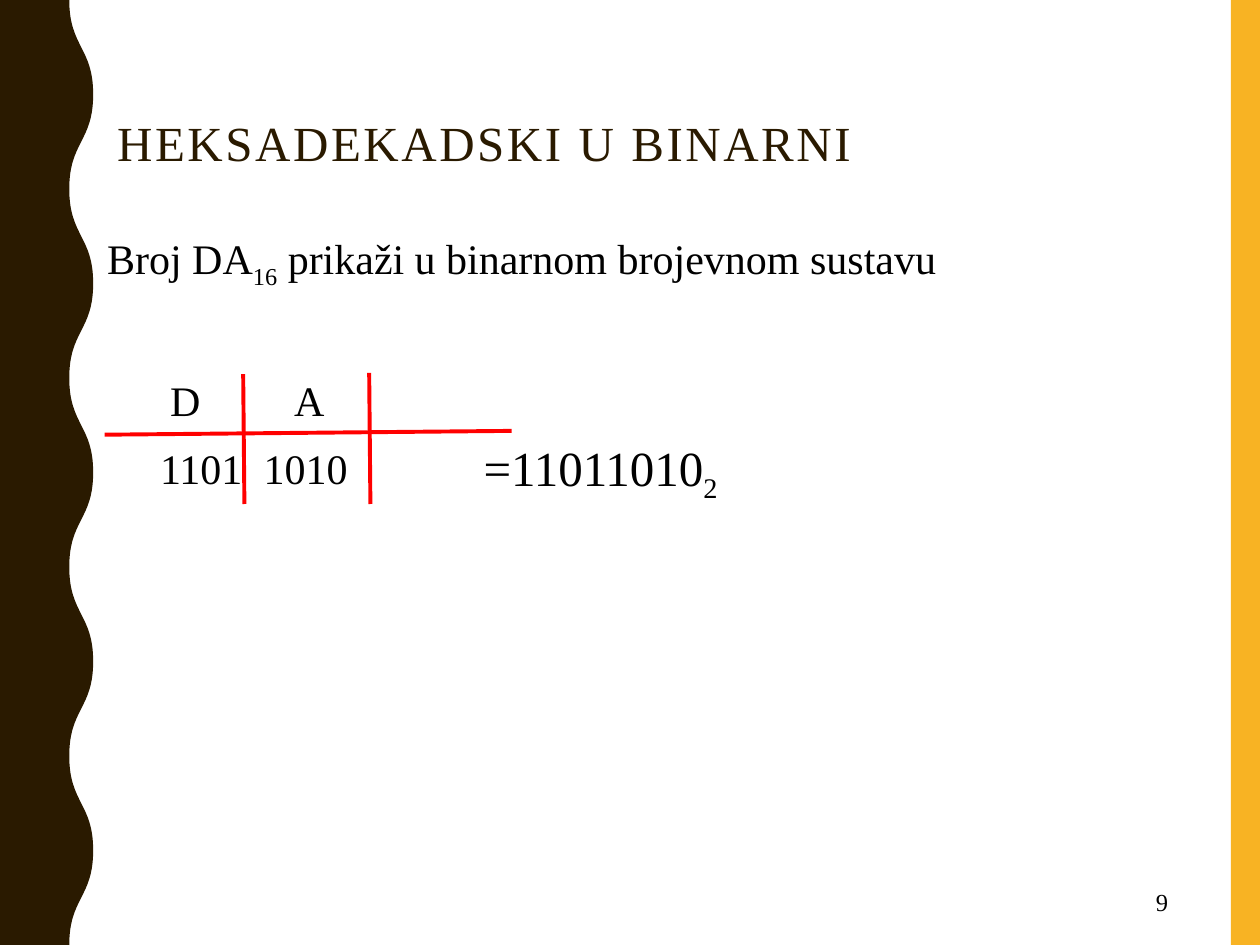
from pptx import Presentation
from pptx.dml.color import RGBColor
from pptx.enum.shapes import MSO_CONNECTOR, MSO_SHAPE
from pptx.enum.text import MSO_ANCHOR, MSO_AUTO_SIZE, PP_ALIGN
from pptx.oxml.ns import qn
from pptx.util import Inches, Pt
from lxml.etree import SubElement

FONT = "Times New Roman"
BROWN, GOLD, RED, BLACK = "2A1A00", "F8B323", "FF0000", "000000"
TITLE = "HEKSADEKADSKI U BINARNI"
BODY = [
    {"runs": [("Broj DA", {}), ("16", {"baseline": "-25000"}),
              (" prikaži u binarnom brojevnom sustavu", {})],
     "before": 7, "indent": 0.25},
    {"runs": [("D", {}), (" ", {"spc": "4750"}), ("A", {})],
     "before": 45.4, "indent": 0.75},
    {"runs": [("1101", {}), (" ", {"spc": "600"}), ("1010", {})],
     "before": 7.4, "indent": 0.67},
]
RESULT = [("=11011010", {}), ("2", {"baseline": "-25000"})]
PAGE_NUMBER = [("9", {})]
GRID_LINES = [
    (0.83, 3.45, 4.06, 3.42),
    (1.94, 4, 1.93, 2.97),
    (2.94, 4, 2.93, 2.96),
]
WAVE_NEAR, WAVE_FAR, HALF_WAVE, HALF_WAVES = 0.55, 0.74, 0.75, 10


def color(value):
    return RGBColor.from_string(value)


def box(*lengths):
    return [Inches(length) for length in lengths]


def place(shape, *position):
    shape.left, shape.top, shape.width, shape.height = box(*position)


def paint(shape, value):
    shape.fill.solid()
    shape.fill.fore_color.rgb = color(value)
    shape.line.fill.background()
    shape.shadow.inherit = False


def set_font(paragraph, size, value=BLACK):
    paragraph.font.name = FONT
    paragraph.font.size = Pt(size)
    paragraph.font.color.rgb = color(value)


def add_runs(paragraph, runs):
    for text, attributes in runs:
        run = paragraph.add_run()
        run.text = text
        for name, value in attributes.items():
            run.font._element.set(name, value)


def set_indent(paragraph, indent):
    properties = paragraph._p.get_or_add_pPr()
    properties.set("marL", str(Inches(indent)))
    properties.set("indent", "0")
    SubElement(properties, qn("a:buNone"))


def wave_points():
    points = []
    for index in range(HALF_WAVES):
        start, end = (WAVE_NEAR, WAVE_FAR) if index % 2 == 0 else (WAVE_FAR, WAVE_NEAR)
        middle, bottom = (index + 0.5) * HALF_WAVE, (index + 1) * HALF_WAVE
        points += [(start, middle), (end, middle), (end, bottom)]
    return points


def round_wave(wave):
    segments = list(wave._element.iter(qn("a:lnTo")))[:3 * HALF_WAVES]
    for first in range(0, len(segments), 3):
        curve = segments[first].makeelement(qn("a:cubicBezTo"))
        segments[first].addprevious(curve)
        for segment in segments[first:first + 3]:
            curve.append(segment[0])
            segment.getparent().remove(segment)


def add_background(slide):
    band = slide.shapes.add_shape(MSO_SHAPE.RECTANGLE, *box(9.77, 0, 0.23, 7.5))
    paint(band, GOLD)
    builder = slide.shapes.build_freeform(Inches(WAVE_NEAR), 0)
    outline = [*wave_points(), (0, 7.5), (0, 0)]
    builder.add_line_segments([box(*point) for point in outline], close=True)
    wave = builder.convert_to_shape()
    round_wave(wave)
    paint(wave, BROWN)
    for index, shape in enumerate((band, wave)):
        slide.shapes._spTree.insert(2 + index, shape._element)


def add_title(slide):
    title = slide.shapes.title
    place(title, 0.83, 0.89, 9, 0.61)
    frame = title.text_frame
    frame.auto_size = MSO_AUTO_SIZE.NONE
    frame.vertical_anchor = MSO_ANCHOR.MIDDLE
    frame.margin_bottom = Inches(0.13)
    frame.text = TITLE
    paragraph = frame.paragraphs[0]
    paragraph.alignment = PP_ALIGN.LEFT
    paragraph.line_spacing = 0.9
    set_font(paragraph, 28, BROWN)
    paragraph.runs[0].font._element.set("spc", "150")


def add_body(slide):
    body = slide.placeholders[1]
    place(body, 0.5, 1.75, 9, 2.79)
    frame = body.text_frame
    frame.auto_size = MSO_AUTO_SIZE.NONE
    for index, row in enumerate(BODY):
        paragraph = frame.add_paragraph() if index else frame.paragraphs[0]
        paragraph.line_spacing = 1.1
        paragraph.space_before = Pt(row["before"])
        set_indent(paragraph, row["indent"])
        set_font(paragraph, 24)
        add_runs(paragraph, row["runs"])


def add_text(slide, position, runs, size, alignment, anchor, wrap):
    frame = slide.shapes.add_textbox(*box(*position)).text_frame
    frame.word_wrap = wrap
    frame.vertical_anchor = anchor
    paragraph = frame.paragraphs[0]
    paragraph.alignment = alignment
    set_font(paragraph, size)
    add_runs(paragraph, runs)


def add_grid(slide):
    group = slide.shapes.add_group_shape()
    for ends in GRID_LINES:
        line = group.shapes.add_connector(MSO_CONNECTOR.STRAIGHT, *box(*ends))
        line.line.color.rgb = color(RED)
        line.line.width = Pt(2.25)
        SubElement(line._element.spPr, qn("a:effectLst"))


def main():
    presentation = Presentation()
    presentation.slide_width, presentation.slide_height = box(10, 7.5)
    slide = presentation.slides.add_slide(presentation.slide_layouts[1])
    add_background(slide)
    add_title(slide)
    add_body(slide)
    add_text(slide, (7.06, 6.97, 2.31, 0.38), PAGE_NUMBER, 14,
             PP_ALIGN.RIGHT, MSO_ANCHOR.MIDDLE, True)
    add_grid(slide)
    add_text(slide, (3.74, 3.42, 2.1, 0.57), RESULT, 28,
             PP_ALIGN.LEFT, MSO_ANCHOR.TOP, False)
    presentation.save("out.pptx")


if __name__ == "__main__":
    main()
